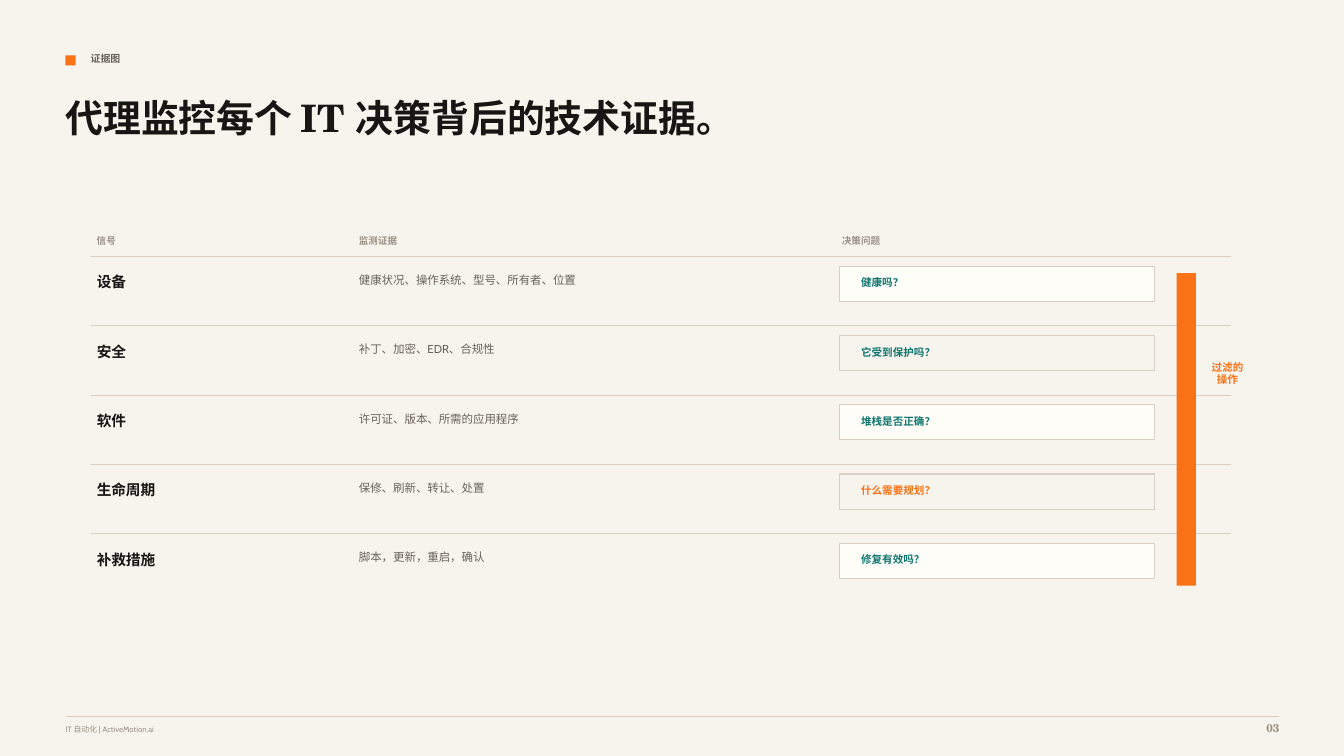
from dataclasses import dataclass
from lxml import etree
from pptx import Presentation
from pptx import util as u
from pptx.dml.color import RGBColor
from pptx.enum import shapes, text
from pptx.oxml.ns import qn


@dataclass(frozen=True)
class Theme:
    paper: str = "F7F4EE"
    card: str = "FFFDF8"
    ink: str = "171614"
    body: str = "69635A"
    muted: str = "9A9184"
    rule: str = "D9D0C3"
    orange: str = "F97316"
    teal: str = "0F766E"
    sans: str = "Cabin"
    serif: str = "TeX Gyre Schola"
    title: float = 27
    signal: float = 10.5
    evidence: float = 8.2
    question: float = 7.5
    kicker: float = 7.1
    header: float = 6.8
    footer: float = 5.6


T = Theme()
rgb = RGBColor.from_string


def write(s, words, size, color, bold=True, font=T.sans, align=text.PP_ALIGN.LEFT, left=0, top=0):
    tf = s.text_frame
    tf.word_wrap = True
    tf.auto_size = text.MSO_AUTO_SIZE.NONE
    tf.vertical_anchor = text.MSO_ANCHOR.TOP
    tf.margin_left, tf.margin_top = u.Inches(left), u.Inches(top)
    tf.margin_right = tf.margin_bottom = 0
    tf.text = words
    p = tf.paragraphs[0]
    p.alignment = align
    f = p.runs[0].font
    f.name, f.size, f.bold = font, u.Pt(size), bold
    f.color.rgb = rgb(color)


def block(x, y, w, h, fill=None, line=None):
    sp = s.shapes.add_shape(shapes.MSO_SHAPE.RECTANGLE, *map(u.Inches, (x, y, w, h)))
    sp.shadow.inherit = False
    if fill:
        sp.fill.solid()
        sp.fill.fore_color.rgb = rgb(fill)
    else:
        sp.fill.background()
    if line:
        sp.line.color.rgb = rgb(line)
        sp.line.width = u.Pt(0.75)
    else:
        sp.line.fill.background()
    return sp


prs = Presentation()
prs.slide_width, prs.slide_height = u.Inches(13.33), u.Inches(7.5)
s = prs.slides.add_slide(prs.slide_layouts[5])
s.background.fill.solid()
s.background.fill.fore_color.rgb = rgb(T.paper)

title = s.shapes.title
title.left, title.top, title.width, title.height = map(u.Inches, (0.65, 0.94, 8.85, 1.04))
write(title, "代理监控每个 IT 决策背后的技术证据。", T.title, T.ink, font=T.serif)

margin = 0.65
table_left, table_width = 0.9, 11.31
signal_x, evidence_x, question_x = 0.96, 3.56, 8.33
first_rule, pitch = 2.54, 2.75 / 4
rows = [
    ("设备", "健康状况、操作系统、型号、所有者、位置", "健康吗？", T.teal),
    ("安全", "补丁、加密、EDR、合规性", "它受到保护吗？", T.teal),
    ("软件", "许可证、版本、所需的应用程序", "堆栈是否正确？", T.teal),
    ("生命周期", "保修、刷新、转让、处置", "什么需要规划？", T.orange),
    ("补救措施", "脚本，更新，重启，确认", "修复有效吗？", T.teal),
]

rules = [(table_left, first_rule + i * pitch, table_width) for i in range(len(rows))]
for x, y, w in rules + [(margin, 7.1, 12.04)]:
    y += 0.01 / 2
    c = s.shapes.add_connector(shapes.MSO_CONNECTOR.STRAIGHT, *map(u.Inches, (x, y, x + w, y)))
    c.line.color.rgb = rgb(T.rule)
    c.line.width = u.Pt(0.75)
    etree.SubElement(c._element.spPr, qn("a:effectLst"))

block(margin, 0.55, 0.1, 0.1, T.orange)
left, center, right = text.PP_ALIGN.LEFT, text.PP_ALIGN.CENTER, text.PP_ALIGN.RIGHT
labels = [
    (0.9, 0.52, 6.46, 0.19, "证据图", T.kicker, T.body, True, T.sans, left),
    (signal_x, 2.33, 1.67, 0.17, "信号", T.header, T.muted, True, T.sans, left),
    (evidence_x, 2.33, 3.23, 0.17, "监测证据", T.header, T.muted, True, T.sans, left),
    (8.35, 2.33, 2.92, 0.17, "决策问题", T.header, T.muted, True, T.sans, left),
]
for i, (signal, evidence, question, color) in enumerate(rows):
    y = first_rule + i * pitch
    labels += [
        (signal_x, y + 0.17, 1.88, 0.19, signal, T.signal, T.ink, True, T.sans, left),
        (evidence_x, y + 0.17, 3.75, 0.35, evidence, T.evidence, T.body, False, T.sans, left),
    ]
    card = block(question_x, y + 0.1, 3.12, 0.35, None if i % 2 else T.card, T.rule)
    write(card, question, T.question, color, left=0.21, top=0.1)

block(11.67, 2.71, 0.19, 3.1, T.orange)
labels += [
    (12, 3.58, 0.35, 1.23, "过滤的操作", T.question, T.orange, True, T.sans, center),
    (margin, 7.19, 7.92, 0.15, "IT 自动化 | ActiveMotion.ai", T.footer, T.muted, False, T.sans, left),
    (12.19, 7.15, 0.5, 0.19, "03", T.evidence, T.muted, True, T.serif, right),
]
for x, y, w, h, *style in labels:
    write(s.shapes.add_textbox(*map(u.Inches, (x, y, w, h))), *style)

prs.save("out.pptx")
